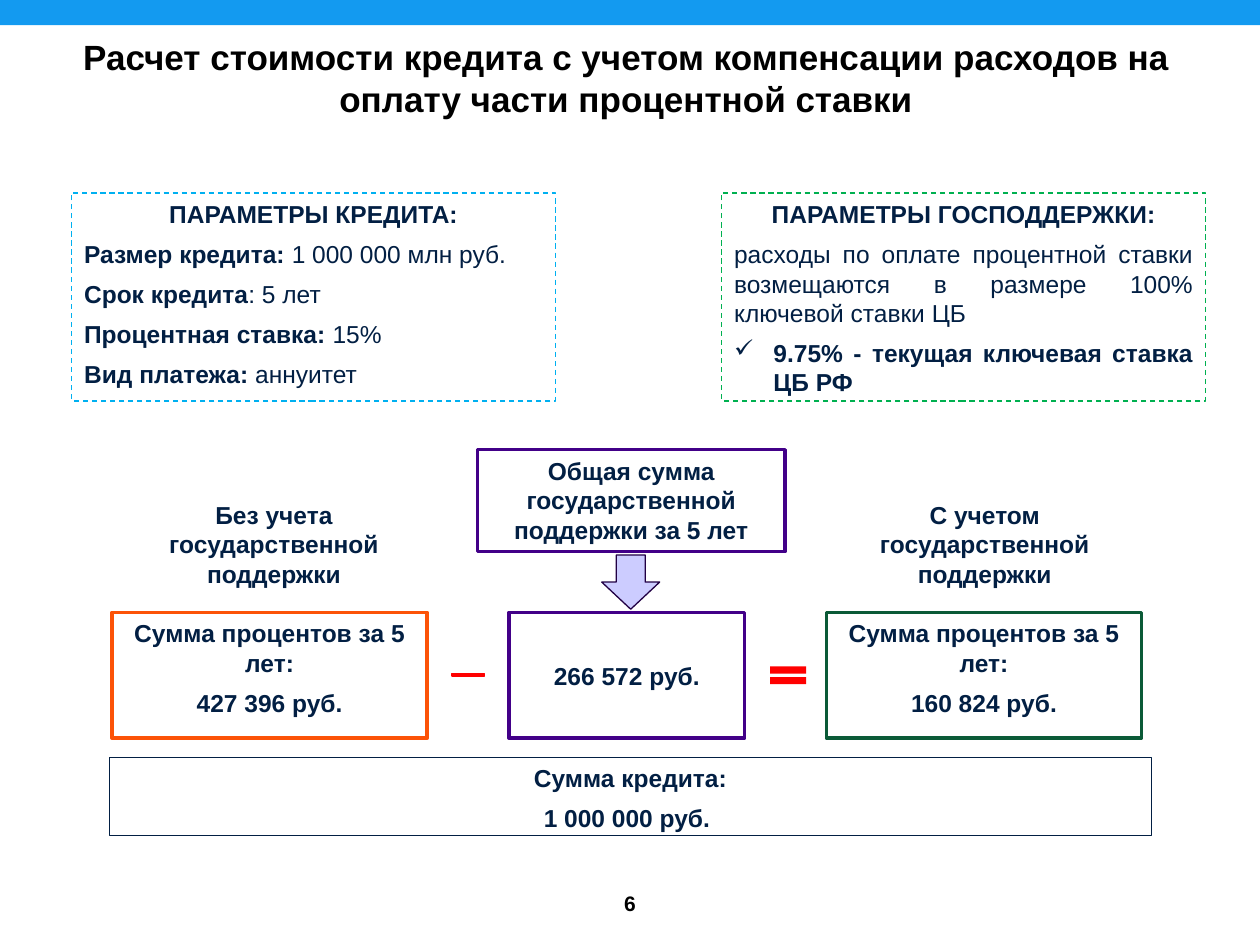
import pptx
import pptx.util
import pptx.dml.color
import pptx.enum.dml
import pptx.enum.shapes
import pptx.enum.text
import lxml.etree
from dataclasses import dataclass

Pt = pptx.util.Pt
Kind = pptx.enum.shapes.MSO_SHAPE
Align = pptx.enum.text.PP_ALIGN
Anchor = pptx.enum.text.MSO_ANCHOR


@dataclass(frozen=True)
class Theme:
    font: str = "Arial"
    head: int = 20
    body: int = 14
    page: int = 12
    black: str = "000000"
    navy: str = "021F43"
    white: str = "FFFFFF"
    bar: str = "139AF0"
    orange: str = "FC5307"
    violet: str = "420088"
    green: str = "0B5A37"
    red: str = "FF0000"
    sky: str = "00B0F0"
    lime: str = "00B050"
    lilac: str = "CCCCFF"
    plum: str = "210044"


def color(code):
    return pptx.dml.color.RGBColor.from_string(code)


class Deck:
    def __init__(self, theme):
        self.theme = theme
        self.show = pptx.Presentation()
        self.show.slide_width, self.show.slide_height = Pt(720), Pt(540)
        self.slide = self.show.slides.add_slide(self.show.slide_layouts[6])

    def shape(self, kind, spot, fill=None, line=None, width=0.75, dash=False):
        item = self.slide.shapes.add_shape(kind, *map(Pt, spot))
        item.shadow.inherit = False
        if fill:
            item.fill.solid()
            item.fill.fore_color.rgb = color(fill)
        else:
            item.fill.background()
        if line:
            item.line.color.rgb = color(line)
            item.line.width = Pt(width)
            if dash:
                item.line.dash_style = pptx.enum.dml.MSO_LINE.DASH
        else:
            item.line.fill.background()
        return item

    def label(self, spot, paras, **style):
        box = self.slide.shapes.add_textbox(*map(Pt, spot))
        self.text(box, paras, **style)
        return box

    def card(self, spot, paras, line, width=2, anchor=Anchor.TOP, after=0):
        box = self.shape(Kind.RECTANGLE, spot, self.theme.white, line, width)
        self.text(box, paras, anchor=anchor, after=after)

    def panel(self, spot, paras, line):
        """Dashed box: centred heading, justified lines below it."""
        box = self.shape(Kind.RECTANGLE, spot, line=line, dash=True)
        self.text(box, paras, before=6, rest=Align.JUSTIFY)
        return box

    def text(self, box, paras, size=None, ink=None, anchor=Anchor.TOP,
             before=0, after=0, rest=Align.CENTER):
        """Each paragraph is a list of (words, bold) runs."""
        frame = box.text_frame
        frame.word_wrap = True
        frame.vertical_anchor = anchor
        for i, runs in enumerate(paras):
            para = frame.add_paragraph() if i else frame.paragraphs[0]
            para.alignment = rest if i else Align.CENTER
            para.space_before = Pt(before if i else 0)
            para.space_after = Pt(after)
            for words, bold in runs:
                run = para.add_run()
                run.text = words
                run.font.name = self.theme.font
                run.font.size = Pt(size or self.theme.body)
                run.font.bold = bold
                run.font.color.rgb = color(ink or self.theme.navy)

    def check(self, para, indent):
        """Turn a paragraph into a tick-marked list item."""
        props = para._p.get_or_add_pPr()
        props.set("marL", str(Pt(indent)))
        props.set("indent", str(-Pt(indent)))
        space = "{http://schemas.openxmlformats.org/drawingml/2006/main}"
        lxml.etree.SubElement(props, space + "buChar").set("char", "✓")


def lines(*texts):
    return [[(text, True)] for text in texts]


def main():
    t = Theme()
    deck = Deck(t)
    deck.shape(Kind.RECTANGLE, (0, 0, 720, 14.4), t.bar)
    deck.label((328.3, 501.8, 63.4, 28.1), lines("6"),
               size=t.page, ink=t.black, anchor=Anchor.MIDDLE)
    deck.label((33.1, 16.6, 649.4, 55.4),
               lines("Расчет стоимости кредита с учетом компенсации расходов "
                     "на оплату части процентной ставки"),
               size=t.head, ink=t.black)

    # Loan and support terms
    top, wide, high = 110.3, 276.5, 118.8
    terms = (("Размер кредита: ", "1 000 000 млн руб."),
             ("Срок кредита", ": 5 лет"),
             ("Процентная ставка: ", "15%"),
             ("Вид платежа: ", "аннуитет"))
    loan = lines("ПАРАМЕТРЫ КРЕДИТА:")
    loan += [[(name, True), (value, False)] for name, value in terms]
    deck.panel((41, top, wide, high), loan, t.sky)
    aid = [[("ПАРАМЕТРЫ ГОСПОДДЕРЖКИ:", True)],
           [("расходы по оплате процентной ставки возмещаются "
             "в размере 100% ключевой ставки ЦБ", False)],
           [("9.75% - текущая ключевая ставка ЦБ РФ", True)]]
    box = deck.panel((412.4, top, wide, high), aid, t.lime)
    deck.check(box.text_frame.paragraphs[-1], 22.5)

    # Interest without support, minus support, equals interest with support
    for left, span, text in (
            (55.4, 202.3, "Без учета государственной поддержки"),
            (491.8, 141.8, "С учетом государственной поддержки")):
        deck.label((left, 282.2, span, 58.3), lines(text), after=6)
    deck.card((272.9, 257, 175.7, 58.3),
              lines("Общая сумма государственной поддержки за 5 лет"),
              t.violet)
    arrow = deck.shape(Kind.RIGHT_ARROW, (344.9, 316.1, 31, 33.1),
                       t.lilac, t.plum)
    arrow.rotation = 90

    row, tall = 349.9, 72
    for left, total, line in ((64.1, "427 396 руб.", t.orange),
                              (472.3, "160 824 руб.", t.green)):
        deck.card((left, row, 180, tall),
                  lines("Сумма процентов за 5 лет:", total), line, after=6)
    deck.card((290.9, row, 134.6, tall), lines("266 572 руб."),
              t.violet, anchor=Anchor.MIDDLE)
    deck.shape(Kind.MATH_MINUS, (254.9, 382.3, 25.2, 6.5), t.red, t.red)
    deck.shape(Kind.MATH_EQUAL, (436.3, 377.3, 28.1, 17.3), t.red)

    deck.card((62.6, 432.7, 595.4, 44.6),
              lines("Сумма кредита:", "1 000 000 руб. "),
              t.navy, width=0.75, after=6)
    deck.show.save("out.pptx")


if __name__ == "__main__":
    main()
